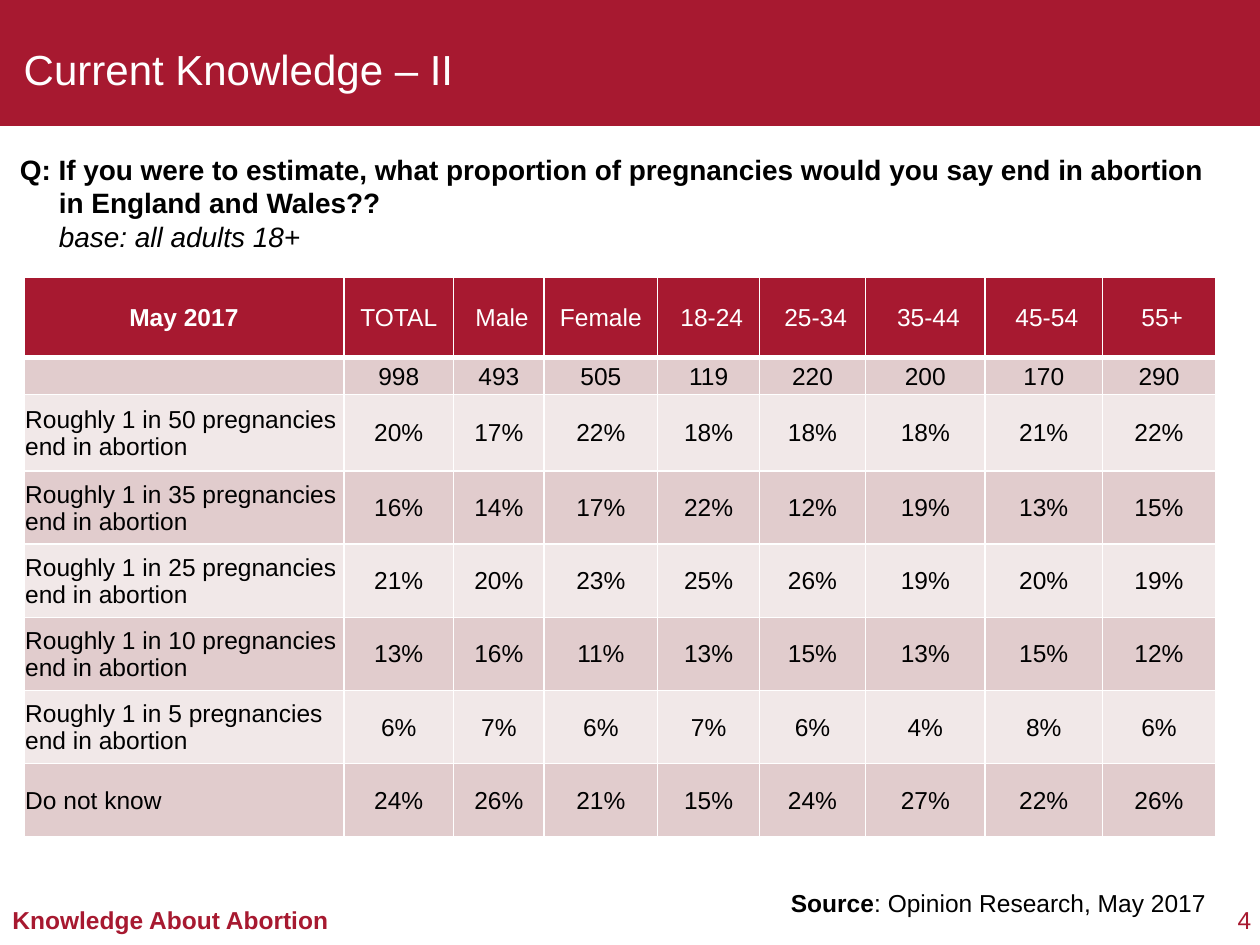
from lxml.etree import SubElement
from pptx import Presentation
from pptx.dml.color import RGBColor
from pptx.enum.shapes import MSO_SHAPE
from pptx.enum.text import MSO_ANCHOR, PP_ALIGN
from pptx.oxml.ns import qn
from pptx.util import Inches, Pt

RED, WHITE, BLACK = "A71930", "FFFFFF", "000000"
BAND_FILLS = ["F1E8E8", "E1CCCD"]

COLUMN_WIDTHS = [2.54, 0.87, 0.72, 0.9, 0.81, 0.84, 0.95, 0.93, 0.9]
ROW_HEIGHTS = [0.64, 0.29, 0.61] + [0.58] * 5
HEADER = ["May 2017", "TOTAL", "Male", "Female", "18-24", "25-34", "35-44", "45-54", "55+"]
NUDGED_HEADERS = set(HEADER) - {"May 2017", "TOTAL", "Female"}
SAMPLE_SIZES = [998, 493, 505, 119, 220, 200, 170, 290]
ANSWERS = [
    ("Roughly 1 in 50 pregnancies end in abortion", [20, 17, 22, 18, 18, 18, 21, 22]),
    ("Roughly 1 in 35 pregnancies end in abortion", [16, 14, 17, 22, 12, 19, 13, 15]),
    ("Roughly 1 in 25 pregnancies end in abortion", [21, 20, 23, 25, 26, 19, 20, 19]),
    ("Roughly 1 in 10 pregnancies end in abortion", [13, 16, 11, 13, 15, 13, 15, 12]),
    ("Roughly 1 in 5 pregnancies end in abortion", [6, 7, 6, 7, 6, 4, 8, 6]),
    ("Do not know", [24, 26, 21, 15, 24, 27, 22, 26]),
]


def color(hex_string):
    return RGBColor.from_string(hex_string)


def add_text(paragraph, text, size=14, fill=BLACK, bold=False, italic=False, font="Arial"):
    """Append text to the paragraph, turning each newline into a line break."""
    for index, line in enumerate(text.split("\n")):
        if index:
            paragraph.add_line_break()
        if line:
            run = paragraph.add_run()
            run.text = line
            run.font.name, run.font.size = font, Pt(size)
            run.font.bold, run.font.italic = bold, italic
            run.font.color.rgb = color(fill)


def set_borders(cell, bottom_width):
    properties = cell._tc.get_or_add_tcPr()
    sides = [("lnL", 1), ("lnR", 1), ("lnT", 1), ("lnB", bottom_width)]
    for position, (side, width) in enumerate(sides):
        line = properties.makeelement(qn(f"a:{side}"), {"w": str(Pt(width))})
        fill = SubElement(line, qn("a:solidFill"))
        SubElement(fill, qn("a:srgbClr"), val=WHITE)
        properties.insert(position, line)


class SlideBuilder:
    def __init__(self, slide):
        self.slide = slide

    def banner(self, left, top, width, height):
        shape = self.slide.shapes.add_shape(
            MSO_SHAPE.RECTANGLE, Inches(left), Inches(top), Inches(width), Inches(height))
        shape.shadow.inherit = False
        shape.fill.solid()
        shape.fill.fore_color.rgb = color(RED)
        shape.line.fill.background()

    def text_box(self, left, top, width, height, parts, align=PP_ALIGN.LEFT,
                 anchor=MSO_ANCHOR.TOP, wrap=True, inset=True, hanging=0):
        """Add a one-paragraph box; parts are (text, format) pairs."""
        box = self.slide.shapes.add_textbox(
            Inches(left), Inches(top), Inches(width), Inches(height))
        frame = box.text_frame
        frame.word_wrap, frame.vertical_anchor = wrap, anchor
        if not inset:
            frame.margin_left = frame.margin_right = frame.margin_top = frame.margin_bottom = 0
        paragraph = frame.paragraphs[0]
        paragraph.alignment = align
        if hanging:
            properties = paragraph._p.get_or_add_pPr()
            properties.set("marL", str(Inches(hanging)))
            properties.set("indent", str(-Inches(hanging)))
        for text, text_format in parts:
            add_text(paragraph, text, **text_format)

    def table(self, left, top, rows):
        table = self.slide.shapes.add_table(
            len(rows), len(COLUMN_WIDTHS), Inches(left), Inches(top),
            Inches(sum(COLUMN_WIDTHS)), Inches(sum(ROW_HEIGHTS))).table
        table.first_row = table.horz_banding = False
        for column, width in zip(table.columns, COLUMN_WIDTHS):
            column.width = Inches(width)
        for row, height in zip(table.rows, ROW_HEIGHTS):
            row.height = Inches(height)
        for row_index, values in enumerate(rows):
            for column_index, text in enumerate(values):
                self.cell(table.cell(row_index, column_index), text, row_index, column_index)

    def cell(self, cell, text, row_index, column_index):
        is_header = row_index == 0
        cell.margin_left = Inches(0.06 if is_header and text in NUDGED_HEADERS else 0.01)
        cell.margin_right = cell.margin_top = Inches(0.01)
        cell.margin_bottom = 0
        cell.vertical_anchor = MSO_ANCHOR.MIDDLE
        cell.fill.solid()
        cell.fill.fore_color.rgb = color(RED if is_header else BAND_FILLS[row_index % 2])
        set_borders(cell, bottom_width=3 if is_header else 1)
        paragraph = cell.text_frame.paragraphs[0]
        is_label = column_index == 0 and not is_header
        paragraph.alignment = PP_ALIGN.LEFT if is_label else PP_ALIGN.CENTER
        add_text(paragraph, text, fill=WHITE if is_header else BLACK,
                 bold=is_header and column_index == 0)
        if not text:
            SubElement(paragraph._p, qn("a:endParaRPr"), sz="1400")


def main():
    presentation = Presentation()
    presentation.slide_width, presentation.slide_height = Inches(10), Inches(7.5)
    builder = SlideBuilder(presentation.slides.add_slide(presentation.slide_layouts[6]))

    builder.banner(0, 0, 10, 1)
    builder.text_box(9.69, 7.18, 0.24, 0.23, [("4", {"fill": RED})],
                     align=PP_ALIGN.RIGHT, wrap=False, inset=False)
    builder.text_box(0, 7.13, 2.72, 0.34,
                     [("Knowledge About Abortion", {"fill": RED, "bold": True})], wrap=False)
    builder.text_box(0.09, 0.26, 7.66, 0.57,
                     [("Current Knowledge – II", {"size": 24, "fill": WHITE})],
                     anchor=MSO_ANCHOR.MIDDLE)
    builder.text_box(4.97, 7, 4.7, 0.34,
                     [("Source", {"bold": True}), (": Opinion Research, May 2017", {})],
                     align=PP_ALIGN.RIGHT)

    rows = [HEADER, ["", *map(str, SAMPLE_SIZES)]]
    rows += [[label, *(f"{share}%" for share in shares)] for label, shares in ANSWERS]
    builder.table(0.19, 2.2, rows)

    question = ("Q: If you were to estimate, what proportion of pregnancies would you say "
                "end in abortion\nin England and Wales??\n")
    builder.text_box(0.06, 1.16, 9.94, 0.91,
                     [(question, {"size": 16, "bold": True}),
                      ("base: all adults 18+", {"size": 16, "italic": True})], hanging=0.31)

    presentation.save("out.pptx")


if __name__ == "__main__":
    main()
